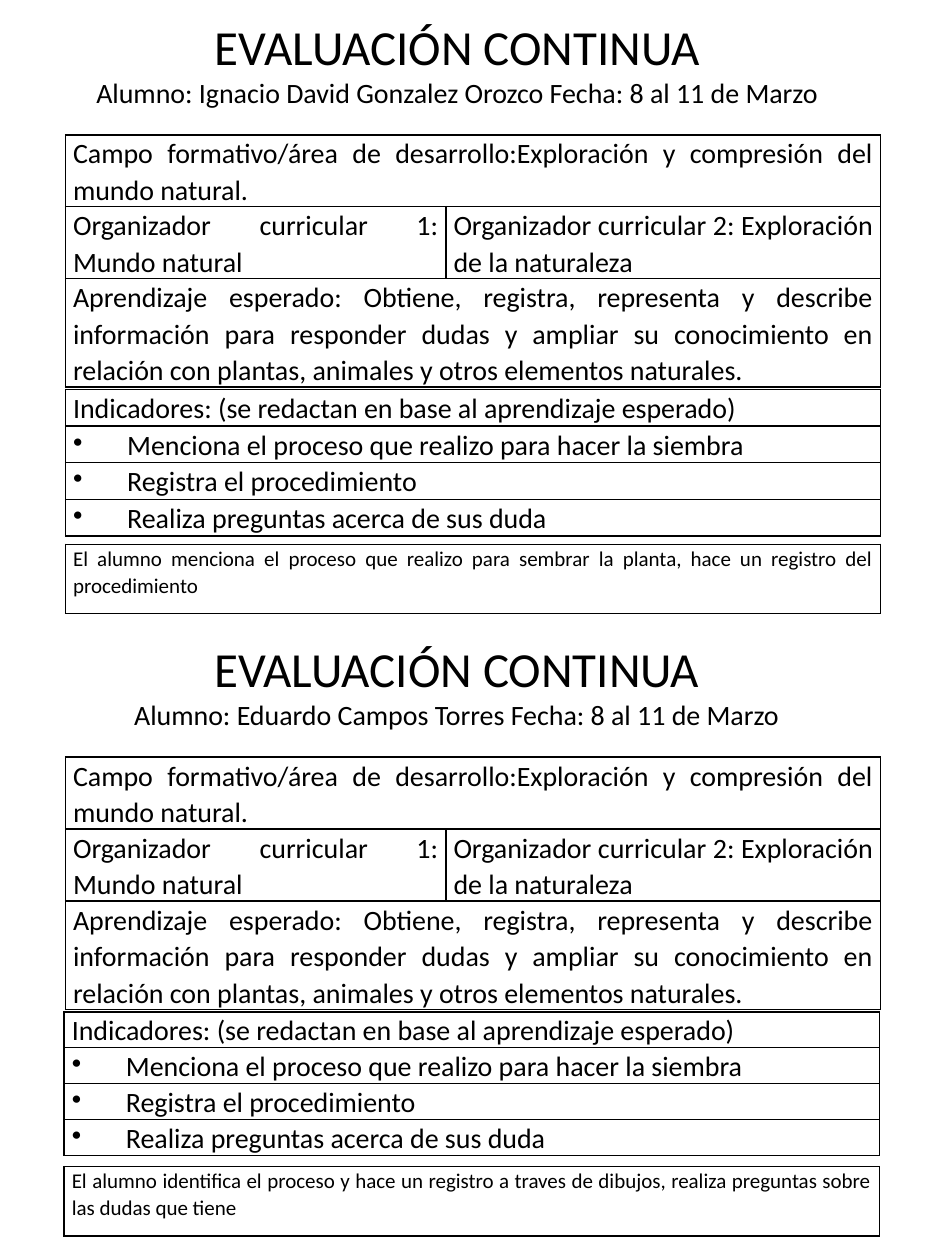
import pptx
import pptx.dml.color
import pptx.enum.text
import pptx.oxml
import pptx.util
from pptx.util import Inches

BLACK = pptx.dml.color.RGBColor(0, 0, 0)
FONT = "Calibri"
WIDTH = 6.47
FORM_STEP = 4.94
PP_ALIGN = pptx.enum.text.PP_ALIGN
A_NS = "http://schemas.openxmlformats.org/drawingml/2006/main"
BORDER = (
    f'<a:{{side}} xmlns:a="{A_NS}" w="12700"><a:solidFill>'
    f'<a:srgbClr val="{BLACK}"/></a:solidFill></a:{{side}}>'
)
BULLET = f'<a:buChar xmlns:a="{A_NS}" char="•"/>'

SUBJECT = [
    ["Campo formativo/área de desarrollo:Exploración y compresión del mundo natural. "],
    ["Organizador curricular 1: Mundo natural",
     "Organizador curricular 2: Exploración de la naturaleza"],
    ["Aprendizaje esperado: Obtiene, registra, representa y describe información "
     "para responder dudas y ampliar su conocimiento en relación con plantas, "
     "animales y otros elementos naturales. "],
]
INDICATORS = [
    ["Indicadores: (se redactan en base al aprendizaje esperado)"],
    ["Menciona el proceso que realizo para hacer la siembra"],
    ["Registra el procedimiento"],
    ["Realiza preguntas acerca de sus duda"],
]
# Heading left and width, left of the lower tables, student, remark
FORMS = [
    (0.63, 6, 0.52, "Alumno: Ignacio David Gonzalez Orozco Fecha: 8 al 11 de Marzo",
     "El alumno menciona el proceso que realizo para sembrar la planta, "
     "hace un registro del procedimiento"),
    (0.93, 5.39, 0.51, "Alumno: Eduardo Campos Torres Fecha: 8 al 11 de Marzo",
     "El alumno identifica el proceso y hace un registro a traves de dibujos, "
     "realiza preguntas sobre las dudas que tiene"),
]


def add_run(p, text, size):
    r = p.add_run()
    r.text = text
    r.font.name = FONT
    r.font.size = pptx.util.Pt(size)
    r.font.color.rgb = BLACK


def add_grid(s, left, top, cols, heights, rows, size=16, bulleted=False):
    """Bordered table; a one-text row spans all columns, bullets skip row one."""
    frame = s.shapes.add_table(len(rows), len(cols), Inches(left), Inches(top),
                               Inches(sum(cols)), Inches(sum(heights)))
    table = frame.table
    table.first_row = table.horz_banding = False
    for column, width in zip(table.columns, cols):
        column.width = Inches(width)
    for i, (texts, height) in enumerate(zip(rows, heights)):
        table.rows[i].height = Inches(height)
        if len(texts) < len(cols):
            table.cell(i, 0).merge(table.cell(i, len(cols) - 1))
        for cell in table.rows[i].cells:
            cell.margin_left = cell.margin_right = Inches(0.06)
            cell.margin_top = cell.margin_bottom = 0
            tc_pr = cell._tc.get_or_add_tcPr()
            for side in ("lnL", "lnR", "lnT", "lnB"):
                tc_pr.append(pptx.oxml.parse_xml(BORDER.format(side=side)))
            cell.fill.background()
        for j, text in enumerate(texts):
            p = table.cell(i, j).text_frame.paragraphs[0]
            p.alignment = PP_ALIGN.JUSTIFY
            p.line_spacing = 1.07
            add_run(p, text, size)
            if bulleted and i > 0:
                p_pr = p._p.get_or_add_pPr()
                p_pr.set("marL", str(Inches(0.43)))
                p_pr.set("indent", str(-Inches(0.43)))
                p_pr.append(pptx.oxml.parse_xml(BULLET))


prs = pptx.Presentation()
prs.slide_width = Inches(7.5)
prs.slide_height = Inches(10)
s = prs.slides.add_slide(prs.slide_layouts[6])

for n, (head_left, head_width, left, student, remark) in enumerate(FORMS):
    top = n * FORM_STEP

    add_grid(s, left, top + 3.09, [WIDTH], [0.285] * 4, INDICATORS, bulleted=True)
    add_grid(s, left, top + 4.32, [WIDTH], [0.55], [[remark]], size=12)

    sp = s.shapes.add_textbox(Inches(head_left), Inches(top + 0.08),
                              Inches(head_width), Inches(1.14))
    tf = sp.text_frame
    tf.word_wrap = False
    tf.vertical_anchor = pptx.enum.text.MSO_ANCHOR.TOP
    for p, text, size in ((tf.paragraphs[0], "EVALUACIÓN CONTINUA", 28),
                          (tf.add_paragraph(), student, 16)):
        p.alignment = PP_ALIGN.CENTER
        add_run(p, text, size)

    add_grid(s, 0.52, top + 1.07, [3.02, 3.45], [0.57, 0.57, 0.86], SUBJECT)

prs.save("out.pptx")
